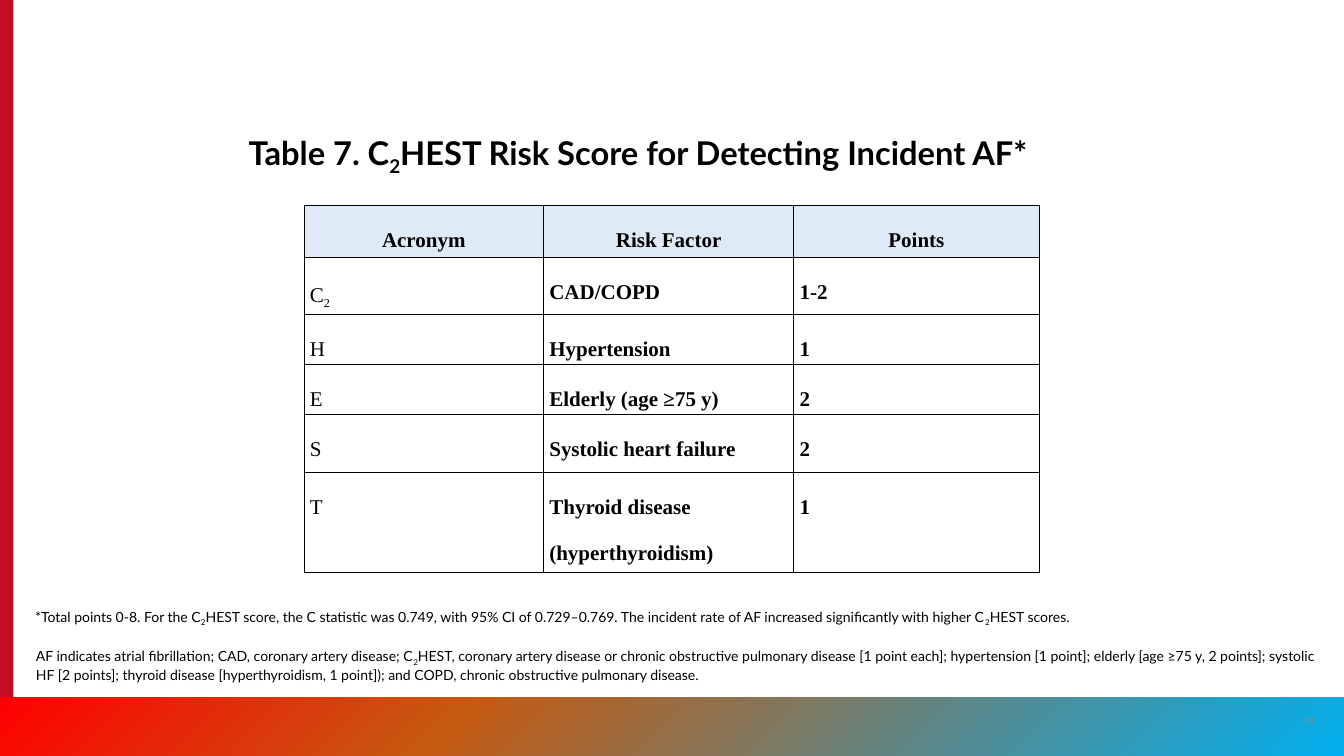
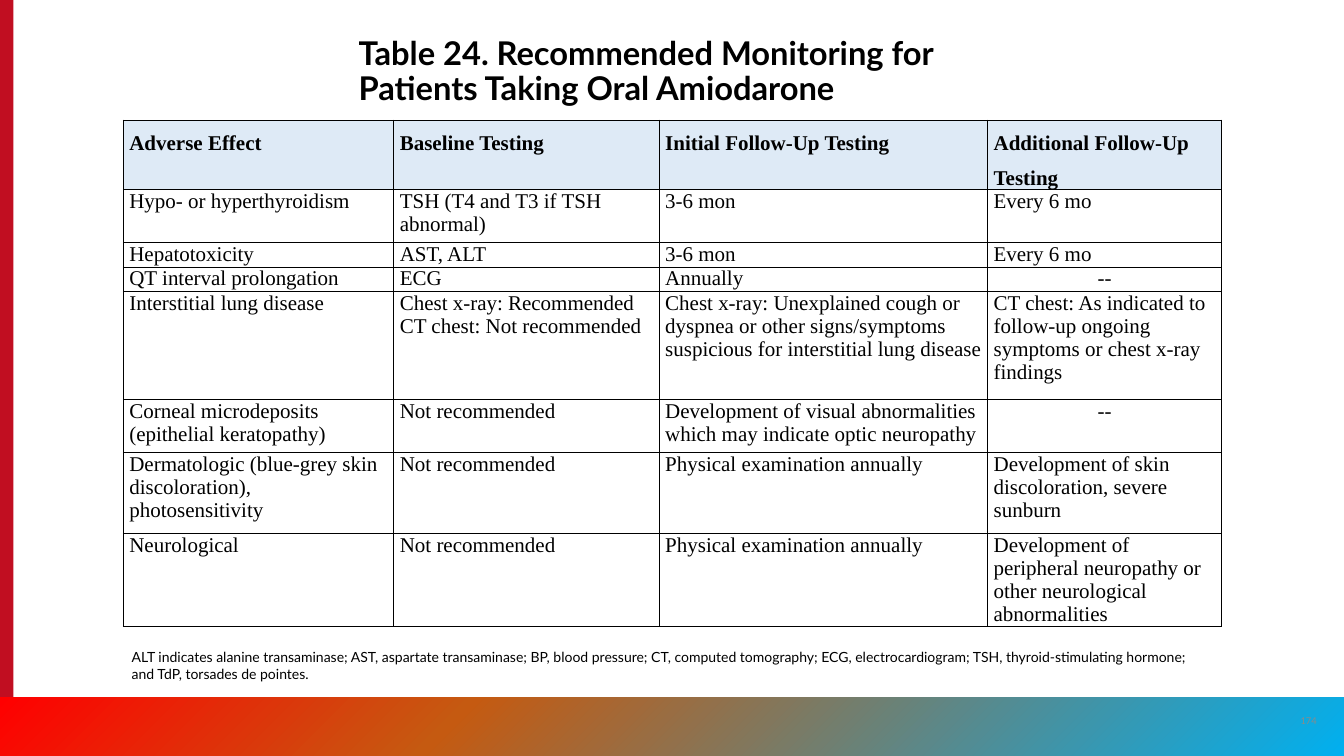
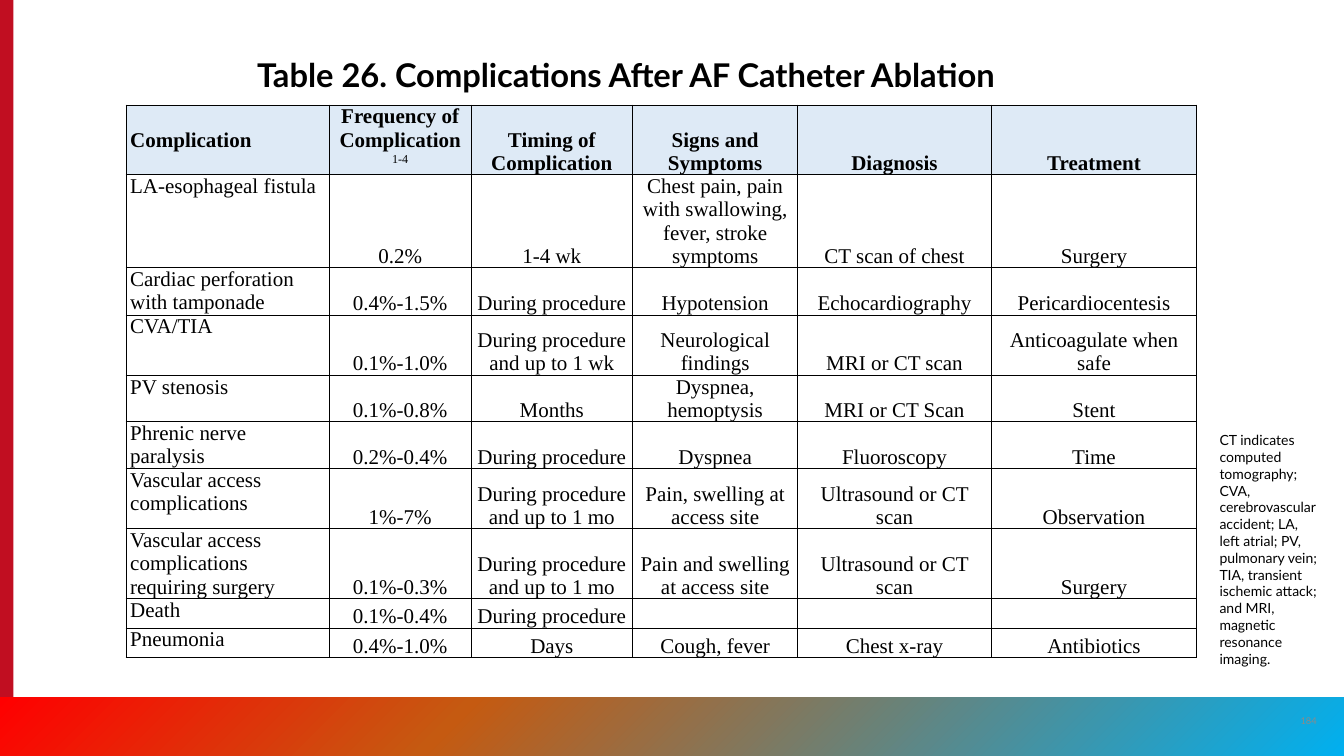
"""Build three table slides on atrial fibrillation that share one look."""
from dataclasses import dataclass

from lxml.etree import SubElement
from pptx import Presentation
from pptx.dml.color import RGBColor
from pptx.enum.shapes import MSO_SHAPE
from pptx.enum.text import MSO_ANCHOR, MSO_AUTO_SIZE, PP_ALIGN
from pptx.oxml import parse_xml
from pptx.oxml.ns import nsdecls, qn
from pptx.util import Inches, Pt

GRID_COLUMNS, GRID_ROWS = 16, 9
SLIDE_WIDTH, SLIDE_HEIGHT = Inches(16), Inches(9)
BLACK, GREY, RED, HEADER_BLUE = "000000", "8A8B8A", "C10E21", "DEEAF6"
BAND_STOPS = ((0, "00B0F0"), (66, "C55A11"), (100, "FF0000"))
TITLE_FONT, TABLE_FONT = "Lato", "Times New Roman"
BASELINES = {"_": -25000, "^": 30000}
BORDER_SIDES = ("a:lnL", "a:lnR", "a:lnT", "a:lnB")


@dataclass(frozen=True)
class Box:
    """A place on the slide, in grid columns and rows."""
    column: float
    row: float
    columns: float
    rows: float

    def lengths(self) -> tuple[int, int, int, int]:
        """Return left, top, width and height."""
        return (across(self.column), down(self.row), across(self.columns), down(self.rows))


@dataclass(frozen=True)
class Note:
    """A small text below or beside a table."""
    box: Box
    text: str


@dataclass(frozen=True)
class TableSpec:
    """Contents and format of one table."""
    column: float
    row: float
    widths: tuple[float, ...]
    heights: tuple[float, ...]
    cells: tuple[tuple[str, ...], ...]
    margin: float = 0.07
    header_spacing: float = 1.0
    body_spacing: float = 1.0
    header_centred: bool = False
    header_anchor: MSO_ANCHOR = MSO_ANCHOR.TOP
    bold_columns: tuple[int, ...] = ()
    centred_columns: tuple[int, ...] = ()


@dataclass(frozen=True)
class SlideSpec:
    """Everything that differs between slides."""
    number: str
    title: str
    title_box: Box
    table: TableSpec
    notes: tuple[Note, ...]


def across(columns: float) -> int:
    """Turn grid columns into a length."""
    return round(SLIDE_WIDTH * columns / GRID_COLUMNS)


def down(rows: float) -> int:
    """Turn grid rows into a length."""
    return round(SLIDE_HEIGHT * rows / GRID_ROWS)


def colour(value: str) -> RGBColor:
    """Turn a hex string into a colour."""
    return RGBColor.from_string(value)


def write_text(frame, text: str, *, size: float, font: str = TITLE_FONT, color: str = BLACK,
               bold: bool = False, align: PP_ALIGN = PP_ALIGN.LEFT, spacing: float = 1.0) -> None:
    """Fill a text frame; |_x| lowers x and |^x| raises it."""
    for line_index, line in enumerate(text.split("\n")):
        paragraph = frame.add_paragraph() if line_index else frame.paragraphs[0]
        paragraph.alignment = align
        paragraph.line_spacing = spacing
        for part_index, part in enumerate(line.split("|")):
            if not part:
                continue
            shifted = part_index % 2 == 1
            run = paragraph.add_run()
            run.text = part[1:] if shifted else part
            run.font.name = font
            run.font.size = Pt(size)
            run.font.bold = bold and not part.startswith("^")
            run.font.color.rgb = colour(color)
            if shifted:
                run.font._element.set("baseline", str(BASELINES[part[0]]))


def add_text(slide, box: Box, text: str, *, anchor: MSO_ANCHOR = MSO_ANCHOR.TOP,
             grow: bool = False, **text_format) -> None:
    """Add a wrapping text box."""
    frame = slide.shapes.add_textbox(*box.lengths()).text_frame
    frame.word_wrap = True
    frame.auto_size = MSO_AUTO_SIZE.SHAPE_TO_FIT_TEXT if grow else MSO_AUTO_SIZE.NONE
    frame.vertical_anchor = anchor
    write_text(frame, text, **text_format)


def add_rectangle(slide, box: Box, color: str):
    """Add a plain rectangle without line or shadow."""
    shape = slide.shapes.add_shape(MSO_SHAPE.RECTANGLE, *box.lengths())
    shape.shadow.inherit = False
    shape.fill.solid()
    shape.fill.fore_color.rgb = colour(color)
    shape.line.fill.background()
    return shape


def decorate_layout(layout, slide) -> None:
    """Put the side bar and the bottom band on the shared layout."""
    for placeholder in list(layout.placeholders)[1:]:
        layout.shapes.element.remove(placeholder.element)
    bar = add_rectangle(slide, Box(0, 0, 0.16, 9), RED)
    band = add_rectangle(slide, Box(0, 8.3, 16, 0.7), RED)
    band.rotation = 180
    stops = "".join(f'<a:gs pos="{position * 1000}"><a:srgbClr val="{value}"/></a:gs>'
                    for position, value in BAND_STOPS)
    gradient = parse_xml(f'<a:gradFill {nsdecls("a")} rotWithShape="1"><a:gsLst>{stops}</a:gsLst>'
                         '<a:lin ang="2700000" scaled="1"/></a:gradFill>')
    properties = band.element.spPr
    properties.replace(properties.find(qn("a:solidFill")), gradient)
    for shape in (bar, band):
        layout.shapes.element.append(shape.element)


def add_title(slide, text: str, box: Box) -> None:
    """Place and fill the title placeholder."""
    title = slide.shapes.title
    title.left, title.top, title.width, title.height = box.lengths()
    frame = title.text_frame
    frame.word_wrap = True
    frame.auto_size = MSO_AUTO_SIZE.NONE
    frame.vertical_anchor = MSO_ANCHOR.BOTTOM
    write_text(frame, text, size=28, bold=True, spacing=0.9)


def add_borders(cell) -> None:
    """Draw a thin black line on each side of a cell."""
    properties = cell._tc.get_or_add_tcPr()
    for index, side in enumerate(BORDER_SIDES):
        line = properties.makeelement(qn(side), {"w": str(Pt(1))})
        fill = SubElement(line, qn("a:solidFill"))
        SubElement(fill, qn("a:srgbClr"), {"val": BLACK})
        properties.insert(index, line)


def format_cell(cell, text: str, row: int, column: int, spec: TableSpec) -> None:
    """Fill and format one table cell."""
    header = row == 0
    centred_column = column in spec.centred_columns
    centred = centred_column or text == "--" or (header and spec.header_centred)
    cell.margin_left = cell.margin_right = Inches(spec.margin)
    cell.margin_top = cell.margin_bottom = 0
    if centred_column:
        cell.vertical_anchor = MSO_ANCHOR.BOTTOM
    else:
        cell.vertical_anchor = spec.header_anchor if header else MSO_ANCHOR.TOP
    if header:
        cell.fill.solid()
        cell.fill.fore_color.rgb = colour(HEADER_BLUE)
    else:
        cell.fill.background()
    add_borders(cell)
    write_text(cell.text_frame, text, size=18, font=TABLE_FONT,
               bold=header or column in spec.bold_columns,
               align=PP_ALIGN.CENTER if centred else PP_ALIGN.LEFT,
               spacing=spec.header_spacing if header else spec.body_spacing)


def add_table(slide, spec: TableSpec) -> None:
    """Add a table with its sizes and cells."""
    box = Box(spec.column, spec.row, sum(spec.widths), sum(spec.heights))
    table = slide.shapes.add_table(len(spec.heights), len(spec.widths), *box.lengths()).table
    table.horz_banding = False
    for table_column, width in zip(table.columns, spec.widths):
        table_column.width = across(width)
    for table_row, height in zip(table.rows, spec.heights):
        table_row.height = down(height)
    for row, texts in enumerate(spec.cells):
        for column, text in enumerate(texts):
            format_cell(table.cell(row, column), text, row, column, spec)


RISK_SCORE = TableSpec(
    3.62, 2.45, (2.85, 2.98, 2.92), (0.61, 0.68, 0.6, 0.6, 0.68, 1.2),
    (
        ("Acronym", "Risk Factor", "Points"),
        ("C|_2|", "CAD/COPD", "1-2"),
        ("H", "Hypertension", "1"),
        ("E", "Elderly (age ≥75 y)", "2"),
        ("S", "Systolic heart failure", "2"),
        ("T", "Thyroid disease (hyperthyroidism)", "1"),
    ),
    header_spacing=2.0, body_spacing=2.0, header_centred=True, bold_columns=(1, 2),
)

MONITORING = TableSpec(
    1.47, 1.43, (3.22, 3.16, 3.91, 2.78), (0.83, 0.63, 0.29, 0.29, 1.29, 0.63, 0.96, 1.11),
    (
        ("Adverse Effect", "Baseline Testing", "Initial Follow-Up Testing",
         "Additional Follow-Up Testing"),
        ("Hypo- or hyperthyroidism", "TSH (T4 and T3 if TSH abnormal)", "3-6 mon", "Every 6 mo"),
        ("Hepatotoxicity", "AST, ALT", "3-6 mon", "Every 6 mo"),
        ("QT interval prolongation", "ECG", "Annually", "--"),
        ("Interstitial lung disease", "Chest x-ray: Recommended\nCT chest: Not recommended",
         "Chest x-ray: Unexplained cough or dyspnea or other signs/symptoms suspicious for "
         "interstitial lung disease",
         "CT chest: As indicated to follow-up ongoing symptoms or chest x-ray findings"),
        ("Corneal microdeposits (epithelial keratopathy)", "Not recommended",
         "Development of visual abnormalities which may indicate optic neuropathy", "--"),
        ("Dermatologic (blue-grey skin discoloration), photosensitivity", "Not recommended",
         "Physical examination annually", "Development of skin discoloration, severe sunburn"),
        ("Neurological", "Not recommended", "Physical examination annually",
         "Development of peripheral neuropathy or other neurological abnormalities"),
    ),
    header_spacing=1.5,
)

COMPLICATIONS = TableSpec(
    1.5, 1.25, (2.42, 1.69, 1.92, 1.97, 2.3, 2.45),
    (0.82, 1.11, 0.56, 0.72, 0.55, 0.55, 0.72, 0.82, 0.35, 0.35),
    (
        ("Complication", "Frequency of Complication |^1-4|", "Timing of Complication",
         "Signs and Symptoms", "Diagnosis", "Treatment"),
        ("LA-esophageal fistula", "0.2%", "1-4 wk",
         "Chest pain, pain with swallowing, fever, stroke symptoms", "CT scan of chest", "Surgery"),
        ("Cardiac perforation with tamponade", "0.4%-1.5%", "During procedure", "Hypotension",
         "Echocardiography", "Pericardiocentesis"),
        ("CVA/TIA", "0.1%-1.0%", "During procedure and up to 1 wk", "Neurological findings",
         "MRI or CT scan", "Anticoagulate when safe"),
        ("PV stenosis", "0.1%-0.8%", "Months", "Dyspnea, hemoptysis", "MRI or CT Scan", "Stent"),
        ("Phrenic nerve paralysis", "0.2%-0.4%", "During procedure", "Dyspnea", "Fluoroscopy",
         "Time"),
        ("Vascular access complications", "1%-7%", "During procedure and up to 1 mo",
         "Pain, swelling at access site", "Ultrasound or CT scan", "Observation"),
        ("Vascular access complications requiring surgery", "0.1%-0.3%",
         "During procedure and up to 1 mo", "Pain and swelling at access site",
         "Ultrasound or CT scan", "Surgery"),
        ("Death", "0.1%-0.4%", "During procedure", "", "", ""),
        ("Pneumonia", "0.4%-1.0%", "Days", "Cough, fever", "Chest x-ray", "Antibiotics"),
    ),
    margin=0.05, header_anchor=MSO_ANCHOR.MIDDLE, centred_columns=(1, 2, 3, 4, 5),
)

SLIDES = (
    SlideSpec(
        "54", "Table 7. C|_2|HEST Risk Score for Detecting Incident AF*",
        Box(2.86, 1.12, 9.92, 1), RISK_SCORE,
        (
            Note(Box(0.32, 7.19, 15.01, 0.3),
                 "*Total points 0-8. For the C|_2|HEST score, the C statistic was 0.749, with 95% "
                 "CI of 0.729–0.769. The incident rate of AF increased significantly with higher "
                 "C|_2|HEST scores."),
            Note(Box(0.33, 7.66, 15.49, 0.5),
                 "AF indicates atrial fibrillation; CAD, coronary artery disease; C|_2|HEST, "
                 "coronary artery disease or chronic obstructive pulmonary disease [1 point each]; "
                 "hypertension [1 point]; elderly [age ≥75 y, 2 points]; systolic HF [2 points]; "
                 "thyroid disease [hyperthyroidism, 1 point]); and COPD, chronic obstructive "
                 "pulmonary disease."),
        ),
    ),
    SlideSpec(
        "174", "Table 24. Recommended Monitoring for Patients Taking Oral Amiodarone",
        Box(4.17, 0.33, 7.67, 1), MONITORING,
        (
            Note(Box(1.47, 7.67, 13.07, 0.5),
                 "ALT indicates alanine transaminase; AST, aspartate transaminase; BP, blood "
                 "pressure; CT, computed tomography; ECG, electrocardiogram; TSH, "
                 "thyroid-stimulating hormone; and TdP, torsades de pointes."),
        ),
    ),
    SlideSpec(
        "184", "Table 26. Complications After AF Catheter Ablation",
        Box(2.96, 0.17, 9.83, 1), COMPLICATIONS,
        (
            Note(Box(14.42, 5.09, 1.4, 2.93),
                 "CT indicates computed tomography; CVA, cerebrovascular accident; LA, left "
                 "atrial; PV, pulmonary vein; TIA, transient ischemic attack; and MRI, magnetic "
                 "resonance imaging."),
        ),
    ),
)


def main() -> None:
    """Build and save the presentation."""
    presentation = Presentation()
    presentation.slide_width, presentation.slide_height = SLIDE_WIDTH, SLIDE_HEIGHT
    layout = presentation.slide_layouts.get_by_name("Title Only")
    for index, spec in enumerate(SLIDES):
        slide = presentation.slides.add_slide(layout)
        if index == 0:
            decorate_layout(layout, slide)
        add_title(slide, spec.title, spec.title_box)
        add_table(slide, spec.table)
        for note in spec.notes:
            add_text(slide, note.box, note.text, grow=True, size=12)
        add_text(slide, Box(15.34, 8.34, 0.48, 0.48), spec.number, anchor=MSO_ANCHOR.MIDDLE,
                 size=8, color=GREY, align=PP_ALIGN.CENTER)
    presentation.save("out.pptx")


if __name__ == "__main__":
    main()
